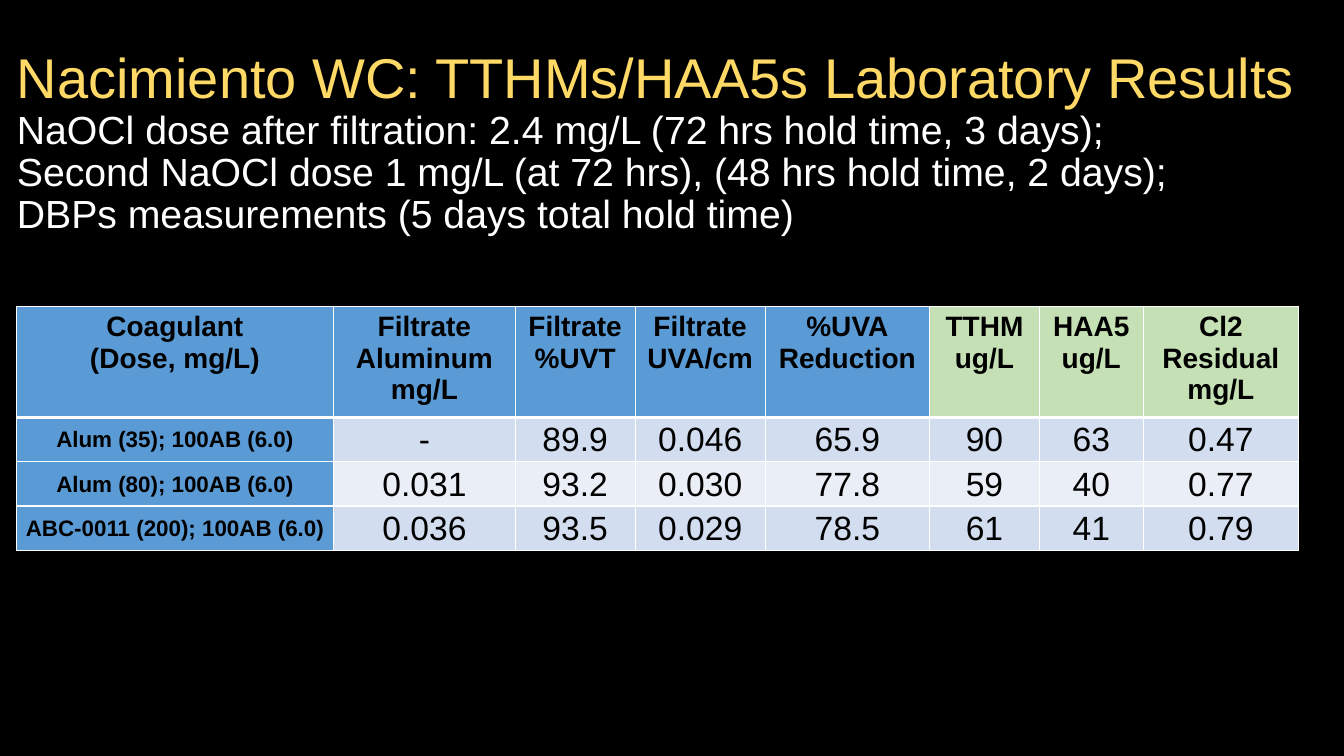
from dataclasses import dataclass

from lxml.etree import SubElement
from pptx import Presentation
from pptx.dml.color import RGBColor
from pptx.enum.text import MSO_ANCHOR as Anchor, PP_ALIGN as Align
from pptx.oxml.ns import qn
from pptx.util import Inches, Pt

BLACK = RGBColor(0x00, 0x00, 0x00)
WHITE = RGBColor(0xFF, 0xFF, 0xFF)
GOLD = RGBColor(0xFF, 0xD9, 0x66)
BLUE = RGBColor(0x5B, 0x9B, 0xD5)
GREEN = RGBColor(0xC5, 0xE0, 0xB4)
BAND_DARK = RGBColor(0xD2, 0xDE, 0xEF)
BAND_LIGHT = RGBColor(0xEA, 0xEF, 0xF7)


@dataclass(frozen=True)
class TextStyle:
    size: int
    color: RGBColor = BLACK
    bold: bool = False


@dataclass(frozen=True)
class CellStyle:
    text: TextStyle
    anchor: Anchor
    margins: tuple[float, float, float, float]
    bottom_line: int = 1


@dataclass(frozen=True)
class Column:
    heading: str
    width: float
    fill: RGBColor
    values: tuple[str, str, str]


TITLE = TextStyle(40, GOLD)
SUBTITLE = TextStyle(28, WHITE)
TIGHT = (0.01, 0.01, 0.01, 0)
HEADING = CellStyle(TextStyle(20, bold=True), Anchor.TOP, (0.1, 0.05, 0.1, 0.05), 3)
COAGULANT = CellStyle(TextStyle(16, bold=True), Anchor.MIDDLE, TIGHT)
RESULT = CellStyle(TextStyle(24), Anchor.MIDDLE, TIGHT)

TITLE_LINES = (
    ("Nacimiento WC: TTHMs/HAA5s Laboratory Results", TITLE),
    ("NaOCl dose after filtration: 2.4 mg/L (72 hrs hold time, 3 days);", SUBTITLE),
    ("Second NaOCl dose 1 mg/L (at 72 hrs), (48 hrs hold time, 2 days);", SUBTITLE),
    ("DBPs measurements (5 days total hold time)", SUBTITLE),
)
COLUMNS = (
    Column("Coagulant\n(Dose, mg/L)", 3.15, BLUE,
           ("Alum (35); 100AB (6.0)", "Alum (80); 100AB (6.0)", "ABC-0011 (200); 100AB (6.0)")),
    Column("Filtrate\nAluminum\nmg/L", 1.8, BLUE, ("-", "0.031", "0.036")),
    Column("Filtrate\n%UVT", 1.19, BLUE, ("89.9", "93.2", "93.5")),
    Column("Filtrate\nUVA/cm", 1.29, BLUE, ("0.046", "0.030", "0.029")),
    Column("%UVA\nReduction", 1.63, BLUE, ("65.9", "77.8", "78.5")),
    Column("TTHM\nug/L", 1.09, GREEN, ("90", "59", "61")),
    Column("HAA5\nug/L", 1.03, GREEN, ("63", "40", "41")),
    Column("Cl2\nResidual\nmg/L", 1.54, GREEN, ("0.47", "0.77", "0.79")),
)
ROW_HEIGHTS = (1.04, 0.44, 0.44, 0.44)


def apply_format(target, values: dict) -> None:
    for name, value in values.items():
        setattr(target, name, value)


def add_span(para, text: str, style: TextStyle) -> None:
    span = para.add_run()
    span.text = text
    apply_format(span.font, {"name": "Arial", "size": Pt(style.size), "bold": style.bold})
    span.font.color.rgb = style.color


def add_title(page) -> None:
    box = page.shapes.add_textbox(Inches(0.07), Inches(0.16), Inches(13.03), Inches(2.53))
    apply_format(box.text_frame, {"word_wrap": True, "vertical_anchor": Anchor.MIDDLE})
    para = box.text_frame.paragraphs[0]
    para.line_spacing = 0.9
    for index, (text, style) in enumerate(TITLE_LINES):
        if index:
            para.add_line_break()
        add_span(para, text, style)


def add_borders(cell, bottom_line: int) -> None:
    properties = cell._tc.get_or_add_tcPr()
    for side, width in (("L", 1), ("R", 1), ("T", 1), ("B", bottom_line)):
        line = SubElement(properties, qn(f"a:ln{side}"), w=str(Pt(width)))
        fill = SubElement(line, qn("a:solidFill"))
        SubElement(fill, qn("a:srgbClr"), val=str(WHITE))


def fill_cell(cell, text: str, style: CellStyle, color: RGBColor) -> None:
    left, top, right, bottom = map(Inches, style.margins)
    apply_format(cell, {
        "margin_left": left, "margin_top": top, "margin_right": right,
        "margin_bottom": bottom, "vertical_anchor": style.anchor,
    })
    add_borders(cell, style.bottom_line)
    cell.fill.solid()
    cell.fill.fore_color.rgb = color
    frame = cell.text_frame
    for index, line in enumerate(text.split("\n")):
        para = frame.add_paragraph() if index else frame.paragraphs[0]
        para.alignment = Align.CENTER
        add_span(para, line, style.text)


def add_results(page) -> None:
    width = sum(column.width for column in COLUMNS)
    table = page.shapes.add_table(
        len(ROW_HEIGHTS), len(COLUMNS),
        Inches(0.16), Inches(3.04), Inches(width), Inches(sum(ROW_HEIGHTS)),
    ).table
    for row, height in zip(table.rows, ROW_HEIGHTS):
        row.height = Inches(height)
    for index, column in enumerate(COLUMNS):
        table.columns[index].width = Inches(column.width)
        fill_cell(table.cell(0, index), column.heading, HEADING, column.fill)
        for row, value in enumerate(column.values, start=1):
            band = BAND_DARK if row % 2 else BAND_LIGHT
            style, color = (RESULT, band) if index else (COAGULANT, BLUE)
            fill_cell(table.cell(row, index), value, style, color)


def main() -> None:
    deck = Presentation()
    apply_format(deck, {"slide_width": Inches(13.33), "slide_height": Inches(7.5)})
    page = deck.slides.add_slide(deck.slide_layouts[6])
    page.background.fill.solid()
    page.background.fill.fore_color.rgb = BLACK
    add_title(page)
    add_results(page)
    deck.save("out.pptx")


if __name__ == "__main__":
    main()
